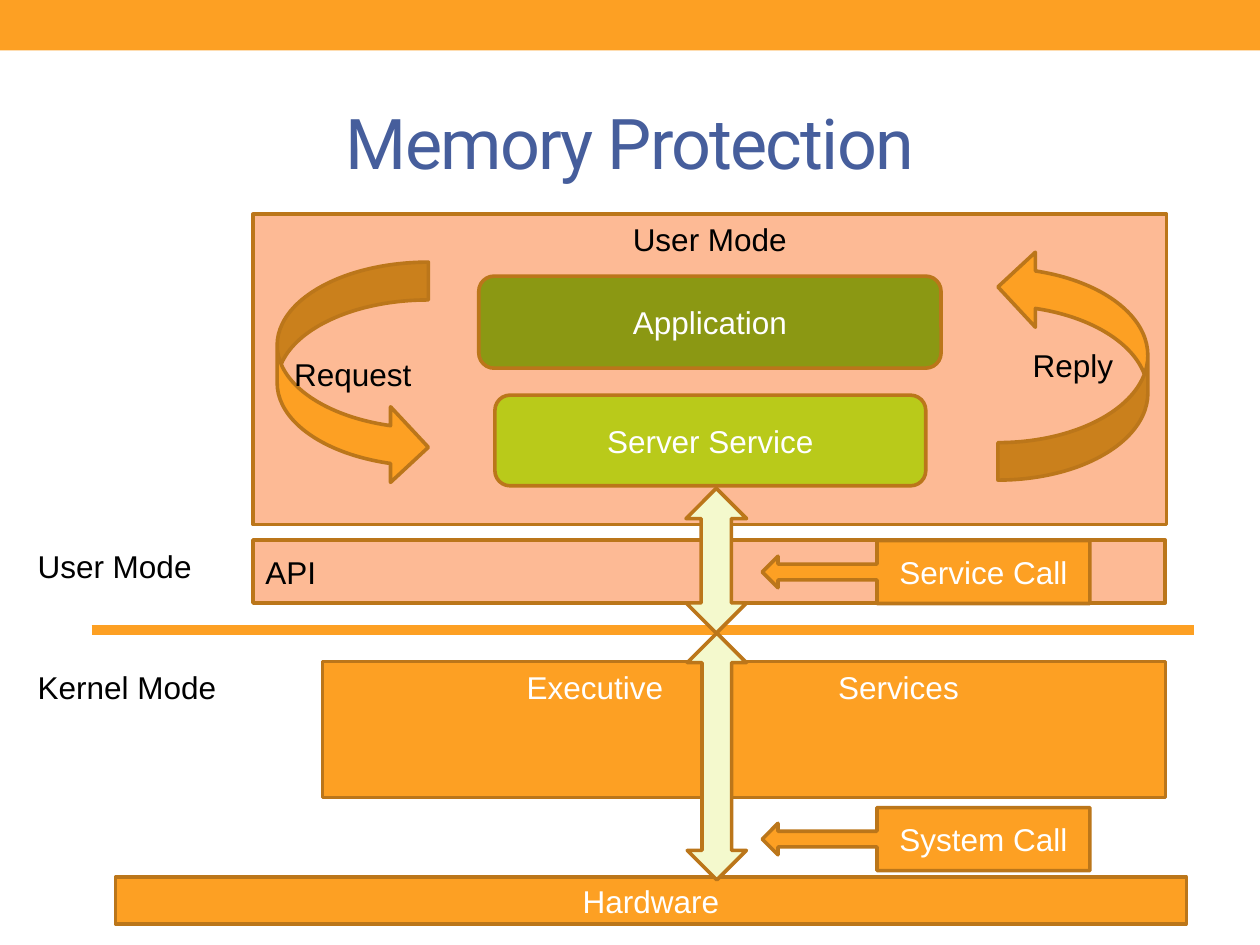
from lxml.etree import SubElement
from pptx import Presentation
from pptx.dml.color import RGBColor
from pptx.enum.shapes import MSO_CONNECTOR as Connector, MSO_SHAPE as Preset
from pptx.enum.text import MSO_ANCHOR as Anchor, MSO_AUTO_SIZE as AutoSize, PP_ALIGN as Align
from pptx.oxml.ns import qn
from pptx.util import Pt

COLORS = {
    "orange": "FDA023", "brown": "BB761A", "peach": "FDBA95", "lime": "B9CA1A",
    "olive": "8B9813", "cream": "F4F9CD", "blue": "465E9C",
    "white": "FFFFFF", "black": "000000",
}
BODY_FONT, TITLE_FONT = "Arial", "Roboto"
TITLE = ("Memory Protection", (36, 41.76, 648, 77.76))
TOP_BAND = (0, 0, 720, 28.8)
MODE_DIVIDER = (52.3, 360, 682.5, 360)
EXECUTIVE_TABS = (109.5, 287.5)

LAYERS = [
    (Preset.RECTANGLE, (184.3, 378, 481.7, 77.8), "orange",
     "\tExecutive\tServices", "white", Align.LEFT, Anchor.TOP),
    (Preset.RECTANGLE, (144.6, 122.4, 522, 177.3), "peach",
     "User Mode", "black", Align.CENTER, Anchor.TOP),
    (Preset.ROUNDED_RECTANGLE, (282.8, 225.8, 246.2, 51.8), "lime",
     "Server Service", "white", Align.CENTER, Anchor.MIDDLE),
    (Preset.RECTANGLE, (144.6, 308.6, 521.3, 36), "peach",
     "API", "black", Align.LEFT, Anchor.MIDDLE),
    (Preset.ROUNDED_RECTANGLE, (273.6, 157.8, 264.2, 52.6), "olive",
     "Application", "white", Align.CENTER, Anchor.MIDDLE),
    (Preset.RECTANGLE, (66, 501.3, 612, 26.6), "orange",
     "Hardware", "white", Align.CENTER, Anchor.MIDDLE),
]
REQUEST = ("Request", (158.4, 149.8, 86.4, 127.4))
REPLY = ("Reply", (547.2, 165.6, 131.8, 85.7))
VERTICAL_ARROWS = [(367.9, 303.1, 82.8, 34.6), (339.1, 415.4, 141.1, 33.8)]
CALLS = [("Service Call", 308.9), ("System Call", 461.5)]
CALL_LEFT, CALL_WIDTH, CALL_HEIGHT = 435.6, 187.2, 36
MODE_LABELS = [("User Mode", (14.4, 308.9, 108, 28.8)),
               ("Kernel Mode", (14.4, 378, 132.5, 28.8))]


def rgb(name):
    return RGBColor.from_string(COLORS[name])


def points(values):
    return [Pt(value) for value in values]


def write(shape, text, color, align, anchor, size=18, font=BODY_FONT):
    frame = shape.text_frame
    frame.word_wrap = True
    frame.vertical_anchor = anchor
    paragraph = frame.paragraphs[0]
    paragraph.alignment = align
    run = paragraph.add_run()
    run.text = text
    run.font.size = Pt(size)
    run.font.name = font
    run.font.color.rgb = rgb(color)
    return run


def add_box(slide, preset, box, fill, line="brown"):
    shape = slide.shapes.add_shape(preset, *points(box))
    shape.shadow.inherit = False
    shape.fill.solid()
    shape.fill.fore_color.rgb = rgb(fill)
    if line:
        shape.line.color.rgb = rgb(line)
        shape.line.width = Pt(2.08)
    else:
        shape.line.fill.background()
    return shape


def set_tabs(paragraph, positions):
    tab_list = SubElement(paragraph._p.get_or_add_pPr(), qn("a:tabLst"))
    for position in positions:
        SubElement(tab_list, qn("a:tab"), pos=str(Pt(position)), algn="l")


def add_title(slide):
    text, box = TITLE
    title = slide.shapes.title
    title.left, title.top, title.width, title.height = points(box)
    run = write(title, text, "blue", Align.CENTER, Anchor.MIDDLE, 40, TITLE_FONT)
    run.font._element.set("spc", "-100")
    title.text_frame.auto_size = AutoSize.NONE


def add_divider(slide):
    divider = slide.shapes.add_connector(Connector.STRAIGHT, *points(MODE_DIVIDER))
    divider.line.color.rgb = rgb("orange")
    divider.line.width = Pt(6)
    SubElement(divider._element.spPr, qn("a:effectLst"))


def add_layers(slide):
    for preset, box, fill, text, color, align, anchor in LAYERS:
        layer = add_box(slide, preset, box, fill)
        write(layer, text, color, align, anchor)
        if "\t" in text:
            set_tabs(layer.text_frame.paragraphs[0], EXECUTIVE_TABS)


def add_arrows(slide):
    text, box = REQUEST
    request = add_box(slide, Preset.CURVED_RIGHT_ARROW, box, "orange")
    write(request, text, "black", Align.CENTER, Anchor.MIDDLE)

    text, box = REPLY
    reply = add_box(slide, Preset.CURVED_UP_ARROW, box, "orange")
    reply.rotation = 270
    write(reply, text, "black", Align.CENTER, Anchor.MIDDLE)
    reply.text_frame._txBody.bodyPr.set("vert", "vert")

    for box in VERTICAL_ARROWS:
        add_box(slide, Preset.LEFT_RIGHT_ARROW, box, "cream").rotation = 270

    for text, top in CALLS:
        box = (CALL_LEFT, top, CALL_WIDTH, CALL_HEIGHT)
        call = add_box(slide, Preset.LEFT_ARROW_CALLOUT, box, "orange")
        write(call, text, "white", Align.CENTER, Anchor.MIDDLE)


def add_mode_labels(slide):
    for text, box in MODE_LABELS:
        label = slide.shapes.add_textbox(*points(box))
        write(label, text, "black", Align.LEFT, Anchor.TOP)
        label.text_frame.auto_size = AutoSize.SHAPE_TO_FIT_TEXT


def main():
    presentation = Presentation()
    presentation.slide_width, presentation.slide_height = Pt(720), Pt(540)
    slide = presentation.slides.add_slide(presentation.slide_layouts[5])
    add_box(slide, Preset.RECTANGLE, TOP_BAND, "orange", line=None)
    add_title(slide)
    add_divider(slide)
    add_layers(slide)
    add_arrows(slide)
    add_mode_labels(slide)
    presentation.save("out.pptx")


if __name__ == "__main__":
    main()
